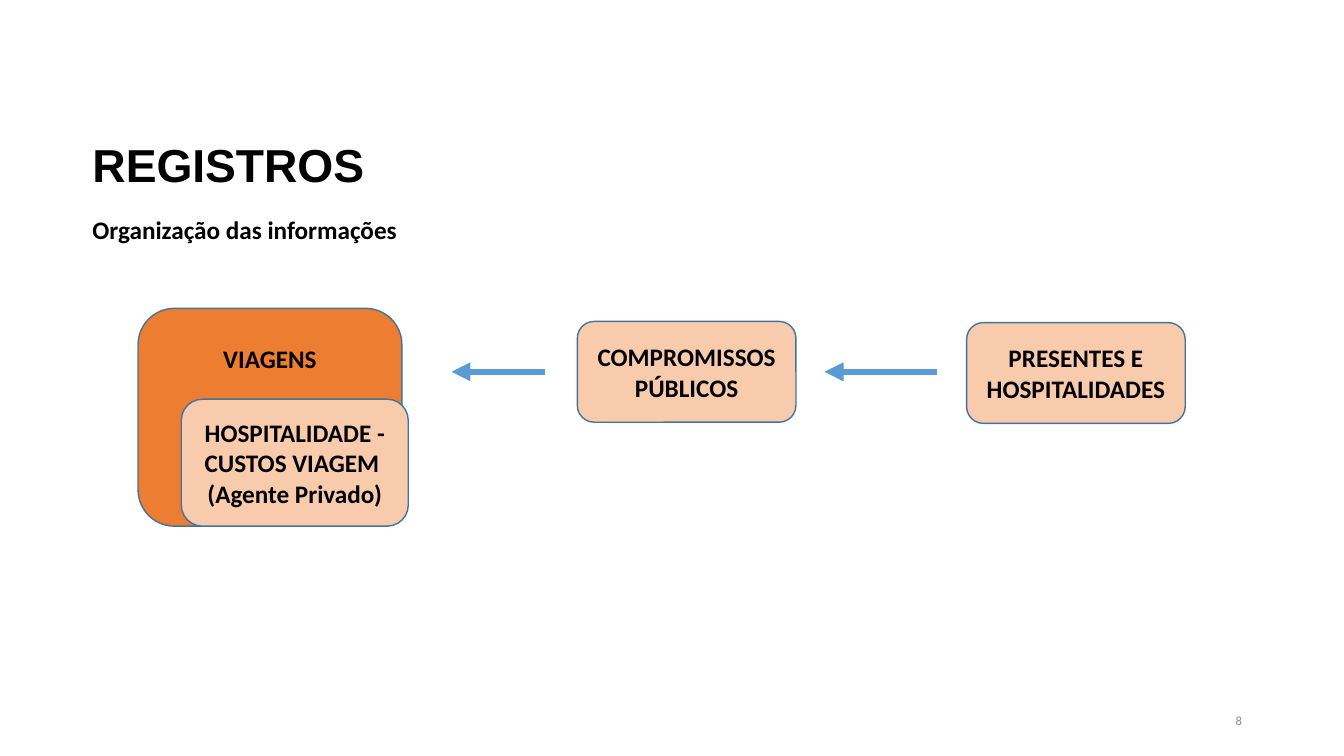
from dataclasses import dataclass

from lxml import etree
from pptx import Presentation
from pptx import util as u
from pptx.dml.color import RGBColor
from pptx.enum import shapes, text
from pptx.oxml.ns import qn


@dataclass(frozen=True)
class Theme:
    ink: str = "000000"
    muted: str = "8C8C8C"
    strong: str = "ED7D31"
    soft: str = "F8CBAD"
    outline: str = "43739E"
    arrow: str = "5B9BD5"
    heading_font: str = "Arial"
    body_font: str = "Calibri"
    title_size: float = 33
    body_size: float = 18
    number_size: float = 9


class RecordsSlide:
    def __init__(self, deck, theme):
        self.theme = theme
        self.slide = deck.slides.add_slide(deck.slide_layouts[6])

    def set_text(self, frame, lines, color=None, align=None, spacing=None,
                 anchor=text.MSO_ANCHOR.MIDDLE, **font_format):
        """Fill a text frame, one paragraph per line, in bold body type by default."""
        frame.word_wrap = True
        frame.vertical_anchor = anchor
        values = {"name": self.theme.body_font, "size": u.Pt(self.theme.body_size),
                  "bold": True, **font_format}
        for index, line in enumerate(lines):
            paragraph = frame.add_paragraph() if index else frame.paragraphs[0]
            paragraph.text = line
            paragraph.alignment = align
            paragraph.line_spacing = spacing
            for key, value in values.items():
                setattr(paragraph.font, key, value)
            paragraph.font.color.rgb = RGBColor.from_string(color or self.theme.ink)

    def label(self, bounds, line, **formats):
        box = self.slide.shapes.add_textbox(*map(u.Cm, bounds))
        self.set_text(box.text_frame, [line], **formats)

    def card(self, bounds, lines, fill, **formats):
        card = self.slide.shapes.add_shape(
            shapes.MSO_SHAPE.ROUNDED_RECTANGLE, *map(u.Cm, bounds))
        card.shadow.inherit = False
        card.fill.solid()
        card.fill.fore_color.rgb = RGBColor.from_string(fill)
        card.line.color.rgb = RGBColor.from_string(self.theme.outline)
        card.line.width = u.Pt(1)
        self.set_text(card.text_frame, lines, align=text.PP_ALIGN.CENTER, **formats)
        return card

    def arrow(self, start, end, y):
        arrow = self.slide.shapes.add_connector(
            shapes.MSO_CONNECTOR.STRAIGHT, *map(u.Cm, (start, y, end, y)))
        arrow.line.color.rgb = RGBColor.from_string(self.theme.arrow)
        arrow.line.width = u.Pt(4.5)
        properties = arrow._element.spPr
        etree.SubElement(properties.find(qn("a:ln")), qn("a:tailEnd"), type="triangle")
        etree.SubElement(properties, qn("a:effectLst"))


def main():
    deck = Presentation()
    deck.slide_width, deck.slide_height = u.Cm(33.87), u.Cm(19.05)
    theme = Theme()
    records = RecordsSlide(deck, theme)

    records.label((2.08, 2.39, 29.21, 3.68), "REGISTROS", spacing=0.9,
                  name=theme.heading_font, size=u.Pt(theme.title_size))
    records.label((2.08, 5.28, 9.32, 1.02), "Organização das informações",
                  anchor=text.MSO_ANCHOR.TOP)
    records.label((23.93, 17.65, 7.62, 1.02), "8", color=theme.muted,
                  align=text.PP_ALIGN.RIGHT, size=u.Pt(theme.number_size), bold=False)

    records.card((24.36, 8.13, 5.51, 2.54), ["PRESENTES E HOSPITALIDADES"], theme.soft)
    records.card((14.55, 8.1, 5.51, 2.54), ["COMPROMISSOS", "PÚBLICOS"], theme.soft)
    trips = records.card((3.48, 7.77, 6.65, 5.49), ["VIAGENS"], theme.strong,
                         anchor=text.MSO_ANCHOR.TOP)
    trips.text_frame.margin_top = u.Cm(0.62)
    records.card((4.57, 10.06, 5.72, 3.2),
                 ["HOSPITALIDADE - CUSTOS VIAGEM  (Agente Privado)"], theme.soft)

    for start, end in ((13.74, 11.38), (23.62, 20.78)):
        records.arrow(start, end, 9.37)

    deck.save("out.pptx")


if __name__ == "__main__":
    main()
